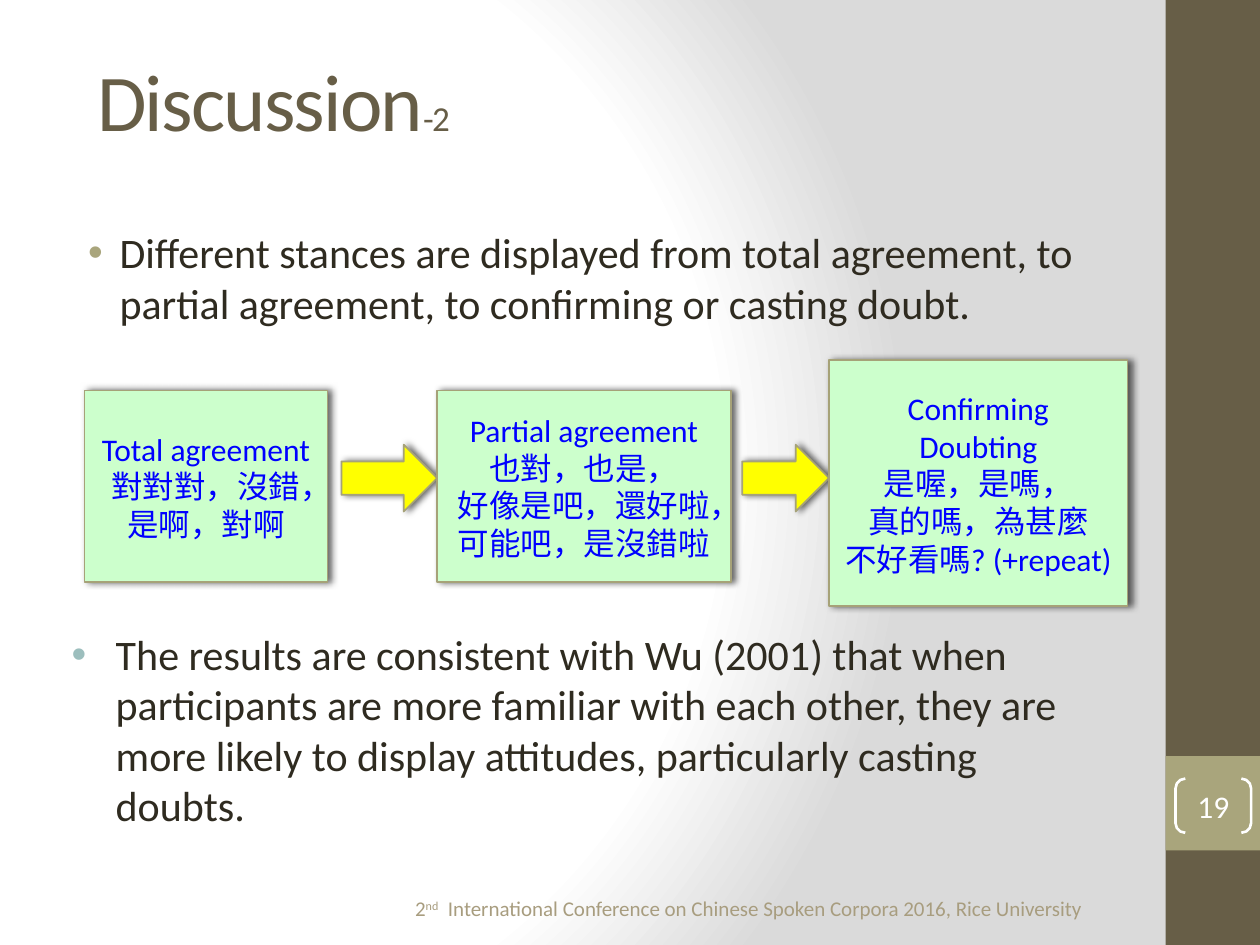
import pptx
import pptx.util
import pptx.dml.color
import pptx.enum.shapes
import pptx.enum.text
import pptx.oxml
import pptx.oxml.ns

Inches, Pt = pptx.util.Inches, pptx.util.Pt
SHAPE = pptx.enum.shapes.MSO_SHAPE
ALIGN = pptx.enum.text.PP_ALIGN
ANCHOR = pptx.enum.text.MSO_ANCHOR
NS = pptx.oxml.ns.nsdecls("a")
qn = pptx.oxml.ns.qn

BROWN, OLIVE, WHITE, DARK = "675E47", "A9A57C", "FFFFFF", "2F2B20"
FONT = "Calibri"


def rgb(value):
    return pptx.dml.color.RGBColor.from_string(value)


def apply(obj, formats):
    for name, value in formats.items():
        setattr(obj, name, value)


def add_run(p, text, size, color):
    r = p.add_run()
    r.text = text
    apply(r.font, {"name": FONT, "size": Pt(size)})
    r.font.color.rgb = rgb(color)
    return r


def set_background(slide):
    slide.background.fill.solid()
    bg = slide._element.find(".//" + qn("p:bgPr"))
    stops = "".join(
        f'<a:gs pos="{pos * 1000}"><a:srgbClr val="{color}"/></a:gs>'
        for pos, color in ((0, WHITE), (75, WHITE), (100, "DADADA")))
    bg.replace(bg[0], pptx.oxml.parse_xml(
        f'<a:gradFill {NS} rotWithShape="1"><a:gsLst>{stops}</a:gsLst>'
        '<a:path path="circle"><a:fillToRect l="20000" t="50000" '
        'r="100000" b="50000"/></a:path></a:gradFill>'))


def add_shape(slide, kind, box, fill=None, line=None, width=1):
    sp = slide.shapes.add_shape(kind, *map(Inches, box))
    sp.shadow.inherit = False
    if fill:
        sp.fill.solid()
        sp.fill.fore_color.rgb = rgb(fill)
    else:
        sp.fill.background()
    if line:
        sp.line.color.rgb = rgb(line)
        sp.line.width = Pt(width)
    else:
        sp.line.fill.background()
    return sp


def add_shadow(sp):
    effects = sp._element.spPr.find(qn("a:effectLst"))
    effects.append(pptx.oxml.parse_xml(
        f'<a:outerShdw {NS} blurRad="{Pt(4)}" dist="{Pt(2)}" dir="0" '
        'rotWithShape="0"><a:srgbClr val="000000"><a:alpha val="60000"/>'
        '</a:srgbClr></a:outerShdw>'))


def fill_text(sp, lines, size, color):
    tf = sp.text_frame
    apply(tf, {"word_wrap": True, "vertical_anchor": ANCHOR.MIDDLE})
    for i, line in enumerate(lines):
        p = tf.add_paragraph() if i else tf.paragraphs[0]
        p.alignment = ALIGN.CENTER
        add_run(p, line, size, color)


def add_stance(slide, box, lines):
    sp = add_shape(slide, SHAPE.RECTANGLE, box, "CCFFCC", "A6A278")
    add_shadow(sp)
    fill_text(sp, lines, 18, "0000FF")


def add_arrow(slide, left, width):
    box = (left, 3.53, width, 0.53)
    add_shadow(add_shape(slide, SHAPE.RIGHT_ARROW, box, "FFFF00", "A6A278"))


def add_text_box(slide, box, anchor):
    tf = slide.shapes.add_textbox(*map(Inches, box)).text_frame
    apply(tf, {"word_wrap": True, "vertical_anchor": anchor})
    return tf


def set_bullet(p, margin, indent, color):
    pPr = p._p.get_or_add_pPr()
    pPr.set("marL", str(Inches(margin)))
    pPr.set("indent", str(Inches(indent)))
    for xml in (f'<a:buClr {NS}><a:srgbClr val="{color}"/></a:buClr>',
                f'<a:buFont {NS} typeface="Arial"/>',
                f'<a:buChar {NS} char="•"/>'):
        pPr.append(pptx.oxml.parse_xml(xml))


def add_title(slide):
    title = slide.shapes.title
    apply(title, {"left": Inches(0.67), "top": Inches(0.25),
                  "width": Inches(8.92), "height": Inches(1.08)})
    title.text_frame.vertical_anchor = ANCHOR.MIDDLE
    p = title.text_frame.paragraphs[0]
    p.alignment = ALIGN.LEFT
    for text, size in (("Discussion", 46), ("-2", 20)):
        r = add_run(p, text, size, BROWN)
        r._r.get_or_add_rPr().set("spc", "-100")


def add_body(slide):
    tf = add_text_box(slide, (0.47, 1.75, 8.48, 4.98), ANCHOR.TOP)
    # The second point starts below the row of stances
    points = (
        ("Different stances are displayed from total agreement, to partial "
         "agreement, to confirming or casting doubt.", 0, 0.38, -0.25, OLIVE),
        ("The results are consistent with Wu (2001) that when participants "
         "are more familiar with each other, they are more likely to display "
         "attitudes, particularly casting doubts.", 172, 0.35, -0.35, "9CBEBD"))
    for i, (text, gap, margin, indent, color) in enumerate(points):
        p = tf.add_paragraph() if i else tf.paragraphs[0]
        p.space_before = Pt(gap)
        set_bullet(p, margin, indent, color)
        add_run(p, text, 24, DARK)


def add_footer(slide):
    tf = add_text_box(slide, (0.5, 6.86, 8.19, 0.5), ANCHOR.BOTTOM)
    p = tf.paragraphs[0]
    p.alignment = ALIGN.RIGHT
    for text, raised in (
            ("2", 0), ("nd", 30000),
            ("  International Conference on Chinese Spoken Corpora 2016, "
             "Rice University", 0)):
        r = add_run(p, text, 12, "A89D7F")
        if raised:
            r._r.get_or_add_rPr().set("baseline", str(raised))


def add_page_number(slide):
    sp = add_shape(slide, SHAPE.DOUBLE_BRACKET, (9.33, 6.18, 0.6, 0.43),
                   line=WHITE, width=1.5)
    sp.adjustments[0] = 0.18
    fill_text(sp, ["19"], 18, WHITE)
    apply(sp.text_frame, dict.fromkeys(
        ("margin_left", "margin_right", "margin_top", "margin_bottom"), 0))


def main():
    prs = pptx.Presentation()
    apply(prs, {"slide_width": Inches(10), "slide_height": Inches(7.5)})
    slide = prs.slides.add_slide(prs.slide_layouts[5])
    set_background(slide)

    # Side band
    add_shape(slide, SHAPE.RECTANGLE, (9.25, 0, 0.75, 7.5), BROWN)
    add_shape(slide, SHAPE.RECTANGLE, (9.25, 6, 0.75, 0.75), OLIVE)
    add_page_number(slide)

    add_title(slide)
    add_body(slide)

    # Stances from agreement to doubt
    add_stance(slide, (0.67, 3.1, 1.93, 1.52),
               ["Total agreement", "對對對，沒錯，", "是啊，對啊"])
    add_arrow(slide, 2.71, 0.76)
    add_stance(slide, (3.47, 3.1, 2.33, 1.52),
               ["Partial agreement", "也對，也是，",
                "好像是吧，還好啦，可能吧，是沒錯啦"])
    add_arrow(slide, 5.89, 0.69)
    add_stance(slide, (6.58, 2.86, 2.37, 1.95),
               ["Confirming", "Doubting", "是喔，是嗎，", "真的嗎，為甚麼",
                "不好看嗎? (+repeat)"])

    add_footer(slide)
    prs.save("out.pptx")


if __name__ == "__main__":
    main()
